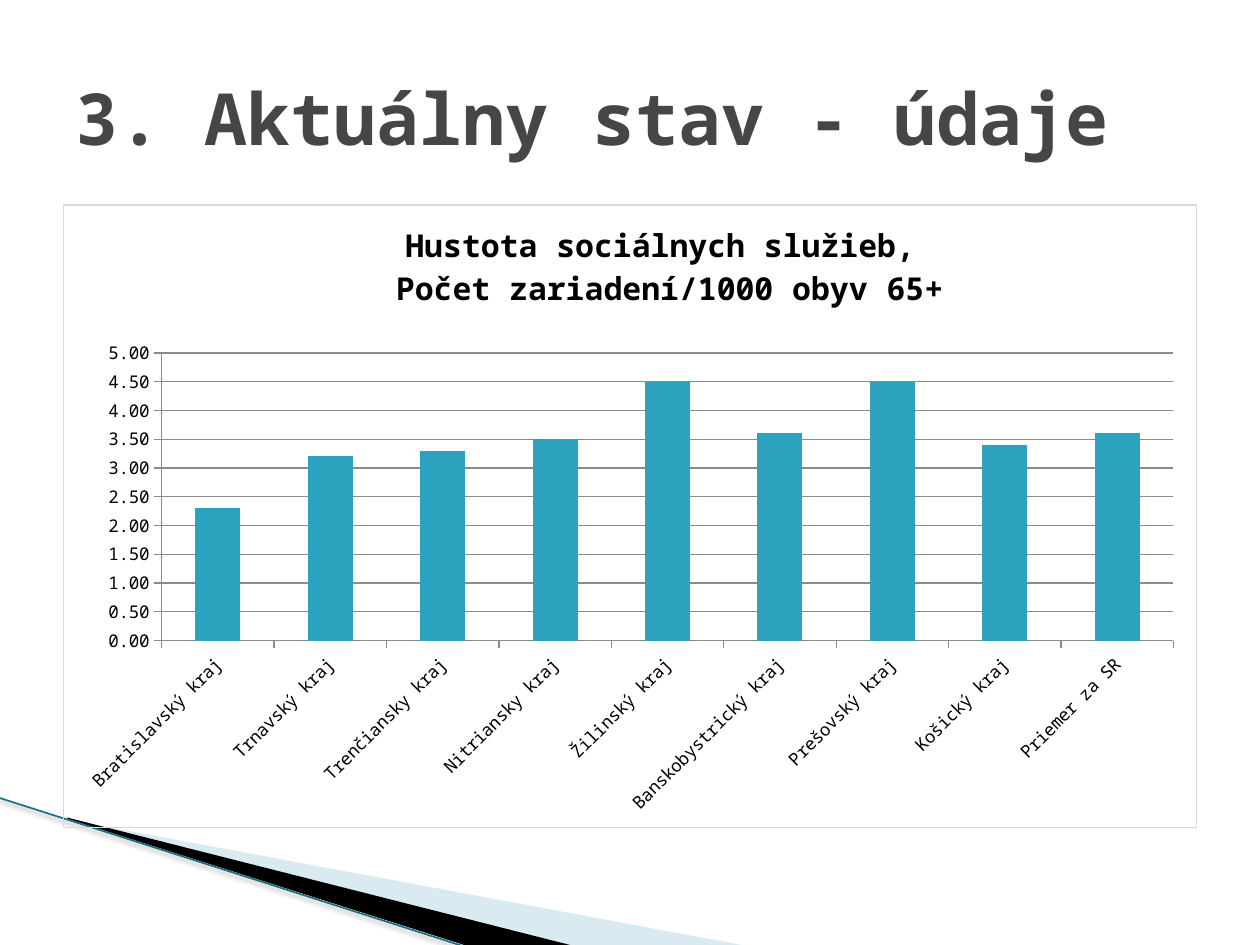
import pptx
import pptx.chart.data
import pptx.dml.color
import pptx.enum.chart
import pptx.enum.shapes
import pptx.enum.text
import pptx.oxml
import pptx.oxml.ns
import pptx.util

Cm, Pt = pptx.util.Cm, pptx.util.Pt
RGBColor = pptx.dml.color.RGBColor
qn = pptx.oxml.ns.qn

FONT = "Noto Sans Mono"
BLACK = RGBColor(0, 0, 0)
HEADING = RGBColor(0x46, 0x46, 0x46)
PALE = RGBColor(0xA0, 0xCB, 0xDC)
TEAL = RGBColor(0x19, 0x6F, 0x85)
BAR = RGBColor(0x2D, 0xA2, 0xBF)
AXIS = RGBColor(0x8B, 0x8B, 0x8B)
BORDER = RGBColor(0xD9, 0xD9, 0xD9)
WHITE = RGBColor(0xFF, 0xFF, 0xFF)

DENSITY = {
    "Bratislavský kraj": 2.3, "Trnavský kraj": 3.2, "Trenčiansky kraj": 3.3,
    "Nitriansky kraj": 3.5, "Žilinský kraj": 4.5, "Banskobystrický kraj": 3.6,
    "Prešovský kraj": 4.5, "Košický kraj": 3.4, "Priemer za SR": 3.6,
}
CHART_TITLE = ("Hustota sociálnych služieb, ", "Počet zariadení/1000 obyv 65+")
NS = pptx.oxml.ns.nsdecls("a", "c")


def xml(text):
    """Parse one element, declaring the drawing and chart namespaces."""
    tag, rest = text[1:].split(">", 1)
    return pptx.oxml.parse_xml(f"<{tag} {NS}>{rest}")


def set_font(font, size, color=BLACK, bold=False):
    for name, value in dict(name=FONT, size=Pt(size), bold=bold).items():
        setattr(font, name, value)
    font.color.rgb = color


def set_line(line, color, width=0.75):
    line.color.rgb = color
    line.width = Pt(width)


def manual_layout(x, y, size=None):
    """Chart layout in fractions of the chart frame; a size means the inner plot."""
    parts = [("layoutTarget", "inner")] if size else []
    parts += [("xMode", "edge"), ("yMode", "edge"), ("x", x), ("y", y)]
    if size:
        parts += zip("wh", size)
    body = "".join(f'<c:{tag} val="{val}"/>' for tag, val in parts)
    return xml(f"<c:layout><c:manualLayout>{body}</c:manualLayout></c:layout>")


def add_layout(parent, layout, before):
    for old in parent.findall(qn("c:layout")):
        parent.remove(old)
    parent.find(qn(before)).addprevious(layout)


def add_wedge(s, left, top, points, color, alpha=100):
    # The builder keeps whole units only, so points go in as hundredths of a cm
    points = [(round((left + x) * 100), round((top + y) * 100)) for x, y in points]
    builder = s.shapes.build_freeform(*points[0], scale=Cm(0.01))
    builder.add_line_segments(points[1:], close=True)
    sp = builder.convert_to_shape()
    sp.shadow.inherit = False
    sp.fill.solid()
    sp.fill.fore_color.rgb = color
    sp.line.fill.background()
    if alpha < 100:
        clr = sp.fill._xPr.find(".//" + qn("a:srgbClr"))
        clr.append(xml(f'<a:alpha val="{alpha * 1000}"></a:alpha>'))


def add_corner(s, left, top):
    """Wedges and shadowed edge line in the lower left corner."""
    add_wedge(s, left, top, [(1.4, 0.53), (15.11, 3.08), (11.58, 3.08), (1.4, 0.51)], PALE, 40)
    add_wedge(s, left, top, [(1.35, 0.48), (11.61, 3.08), (9.45, 3.08), (1.37, 0.51)], BLACK)
    edge = s.shapes.add_connector(
        pptx.enum.shapes.MSO_CONNECTOR.STRAIGHT,
        Cm(left - 0.03), Cm(top + 0.08), Cm(left + 9.42), Cm(top + 3.1))
    set_line(edge.line, TEAL, 0.96)
    edge._element.spPr.append(xml(
        f'<a:effectLst><a:outerShdw blurRad="{Pt(3.1)}" dist="{Pt(1.6)}" dir="5400000">'
        '<a:srgbClr val="000000"><a:alpha val="38000"/></a:srgbClr>'
        '</a:outerShdw></a:effectLst>'))


def add_title(s, left, top, width, height):
    sp = s.shapes.title
    for name, value in dict(left=left, top=top, width=width, height=height).items():
        setattr(sp, name, Cm(value))
    tf = sp.text_frame
    tf.vertical_anchor = pptx.enum.text.MSO_ANCHOR.MIDDLE
    p = tf.paragraphs[0]
    p.alignment = pptx.enum.text.PP_ALIGN.LEFT
    r = p.add_run()
    r.text = "3. Aktuálny stav - údaje"
    set_font(r.font, 41, HEADING, True)


def add_density_chart(s, left, top, width, height):
    data = pptx.chart.data.CategoryChartData(number_format="#,##0.00")
    data.categories = DENSITY.keys()
    data.add_series("Series 1", DENSITY.values())
    chart = s.shapes.add_chart(
        pptx.enum.chart.XL_CHART_TYPE.COLUMN_CLUSTERED,
        Cm(left), Cm(top), Cm(width), Cm(height), data).chart
    chart.has_legend = False
    chart.font.name, chart.font.size = "Arial", Pt(10)
    chart.font.color.rgb = BLACK

    # Title
    tf = chart.chart_title.text_frame
    for i, text in enumerate(CHART_TITLE):
        p = tf.add_paragraph() if i else tf.paragraphs[0]
        p.alignment = pptx.enum.text.PP_ALIGN.CENTER
        r = p.add_run()
        r.text = text
        set_font(r.font, 18, bold=True)
    chart.chart_title.include_in_layout = False
    add_layout(chart.chart_title._element,
               manual_layout(6.63 / width, 0.25 / height), "c:overlay")

    # Columns
    plot = chart.plots[0]
    plot.gap_width = 150
    plot.vary_by_categories = False
    fill = plot.series[0].format.fill
    fill.solid()
    fill.fore_color.rgb = BAR

    # Axes
    for axis in (chart.category_axis, chart.value_axis):
        axis.major_tick_mark = pptx.enum.chart.XL_TICK_MARK.OUTSIDE
        set_font(axis.tick_labels.font, 10)
        set_line(axis.format.line, AXIS)
    labels = chart.category_axis._element.find(qn("c:txPr"))
    labels.find(qn("a:bodyPr")).set("rot", str(-45 * 60000))
    value = chart.value_axis
    value.minimum_scale, value.maximum_scale, value.major_unit = 0, 5, 0.5
    value.tick_labels.number_format = "#,##0.00"
    value.tick_labels.number_format_is_linked = False
    set_line(value.major_gridlines.format.line, AXIS)

    # Plot area and frame
    area = chart._chartSpace.chart.plotArea
    inner = manual_layout(1.98 / width, 2.99 / height, (20.42 / width, 5.81 / height))
    add_layout(area, inner, "c:barChart")
    area.append(xml(f'<c:spPr><a:solidFill><a:srgbClr val="{WHITE}"/></a:solidFill></c:spPr>'))
    chart._chartSpace.chart.addnext(xml(
        f'<c:spPr><a:noFill/><a:ln w="{Pt(0.75)}"><a:solidFill>'
        f'<a:srgbClr val="{BORDER}"/></a:solidFill></a:ln></c:spPr>'))


def main():
    prs = pptx.Presentation()
    prs.slide_width, prs.slide_height = Cm(25.4), Cm(19.05)
    s = prs.slides.add_slide(prs.slide_layouts[5])
    add_corner(s, 0, 16)
    add_title(s, 1.27, 0.76, 22.86, 3.18)
    add_density_chart(s, 1.27, 4.12, 22.86, 12.57)
    prs.save("out.pptx")


if __name__ == "__main__":
    main()
